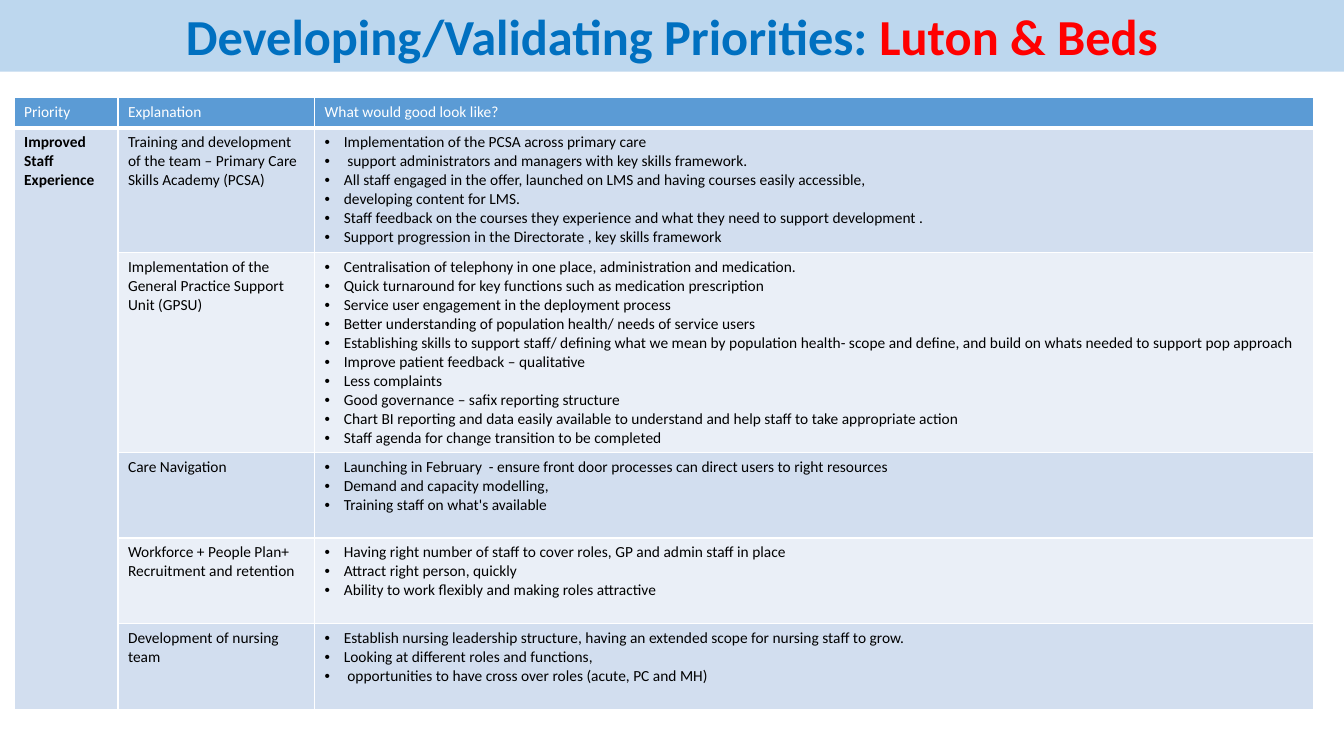
from lxml import etree
from pptx import Presentation
from pptx import util as u
from pptx.dml.color import RGBColor
from pptx.enum import text
from pptx.oxml import ns

W, H = 13.33, 7.5
FONT = "Calibri"
COLORS = {"band": "BDD7EE", "title": "0070C0", "place": "FF0000", "head": "5B9BD5",
          "odd": "D2DEEF", "even": "EAEFF7", "white": "FFFFFF", "black": "000000"}
COLUMNS = [1.03, 1.95, 9.91]
ROWS = [0.3, 1.23, 1.98, 0.85, 0.85, 0.85]
HEADINGS = ["Priority", "Explanation", "What would good look like?"]
PRIORITY = "Improved Staff Experience"
ACTIONS = [
    ("Training and development of the team – Primary Care Skills Academy (PCSA)", [
        "Implementation of the PCSA across primary care",
        " support administrators and managers with key skills framework.",
        "All staff engaged in the offer, launched on LMS and having courses easily accessible,",
        "developing content for LMS.",
        "Staff feedback on the courses they experience and what they need to support development .",
        "Support progression in the Directorate , key skills framework"]),
    ("Implementation of the General Practice Support Unit (GPSU)", [
        "Centralisation of telephony in one place, administration and medication.",
        "Quick turnaround for key functions such as medication prescription",
        "Service user engagement in the deployment process",
        "Better understanding of population health/ needs of service users",
        "Establishing skills to support staff/ defining what we mean by population health- "
        "scope and define, and build on whats needed to support pop approach",
        "Improve patient feedback – qualitative",
        "Less complaints",
        "Good governance – safix reporting structure",
        "Chart BI reporting and data easily available to understand and help staff to take "
        "appropriate action",
        "Staff agenda for change transition to be completed"]),
    ("Care Navigation", [
        "Launching in February  - ensure front door processes can direct users to right resources",
        "Demand and capacity modelling,",
        "Training staff on what's available"]),
    ("Workforce + People Plan+ Recruitment and retention", [
        "Having right number of staff to cover roles, GP and admin staff in place",
        "Attract right person, quickly",
        "Ability to work flexibly and making roles attractive"]),
    ("Development of nursing team", [
        "Establish nursing leadership structure, having an extended scope for nursing staff to grow.",
        "Looking at different roles and functions,",
        " opportunities to have cross over roles (acute, PC and MH)"]),
]


def rgb(name):
    return RGBColor.from_string(COLORS[name])


def add_run(p, words, size, color, bold=False):
    r = p.add_run()
    r.text = words
    r.font.name, r.font.size, r.font.bold = FONT, u.Pt(size), bold
    r.font.color.rgb = rgb(color)


def add_bullet(p, indent=0.19):
    pPr = p._p.get_or_add_pPr()
    pPr.set("marL", str(u.Inches(indent)))
    pPr.set("indent", str(-u.Inches(indent)))
    etree.SubElement(pPr, ns.qn("a:buFont"), typeface="Arial")
    etree.SubElement(pPr, ns.qn("a:buChar"), char="•")


def set_borders(cell, bottom=1):
    tcPr = cell._tc.get_or_add_tcPr()
    for side, width in (("L", 1), ("R", 1), ("T", 1), ("B", bottom)):
        ln = etree.SubElement(tcPr, ns.qn("a:ln" + side), w=str(u.Pt(width)))
        fill = etree.SubElement(ln, ns.qn("a:solidFill"))
        etree.SubElement(fill, ns.qn("a:srgbClr"), val=COLORS["white"])


def fill_cell(cell, lines, fill, color="black", bold=False, bullets=False, bottom=1):
    set_borders(cell, bottom)
    cell.fill.solid()
    cell.fill.fore_color.rgb = rgb(fill)
    tf = cell.text_frame
    for i, line in enumerate(lines):
        p = tf.add_paragraph() if i else tf.paragraphs[0]
        if bullets:
            add_bullet(p)
        add_run(p, line, 11, color, bold)


def add_title(slide, x, y, w, h):
    sp = slide.shapes.title
    sp.left, sp.top, sp.width, sp.height = (u.Inches(v) for v in (x, y, w, h))
    sp.fill.solid()
    sp.fill.fore_color.rgb = rgb("band")
    tf = sp.text_frame
    tf.word_wrap, tf.auto_size = True, text.MSO_AUTO_SIZE.NONE
    tf.vertical_anchor = text.MSO_ANCHOR.MIDDLE
    p = tf.paragraphs[0]
    p.alignment = text.PP_ALIGN.CENTER
    add_run(p, "Developing/Validating Priorities: ", 36, "title", True)
    add_run(p, "Luton & Beds", 36, "place", True)


def add_priorities(slide, x, y):
    frame = slide.shapes.add_table(len(ROWS), len(COLUMNS), u.Inches(x), u.Inches(y),
                                   u.Inches(sum(COLUMNS)), u.Inches(sum(ROWS)))
    table = frame.table
    for column, width in zip(table.columns, COLUMNS):
        column.width = u.Inches(width)
    for row, height in zip(table.rows, ROWS):
        row.height = u.Inches(height)

    # Header row
    for c, heading in enumerate(HEADINGS):
        fill_cell(table.cell(0, c), [heading], "head", "white", bottom=3)

    # One priority spanning all its actions
    table.cell(1, 0).merge(table.cell(len(ACTIONS), 0))
    fill_cell(table.cell(1, 0), [PRIORITY], "odd", bold=True)
    for n, (explanation, outcomes) in enumerate(ACTIONS, 1):
        shade = "odd" if n % 2 else "even"
        fill_cell(table.cell(n, 1), [explanation], shade)
        fill_cell(table.cell(n, 2), outcomes, shade, bullets=True)


def main():
    prs = Presentation()
    prs.slide_width, prs.slide_height = u.Inches(W), u.Inches(H)
    slide = prs.slides.add_slide(prs.slide_layouts[5])
    add_title(slide, 0, 0, W, 0.71)
    add_priorities(slide, 0.14, 0.97)
    prs.save("out.pptx")


if __name__ == "__main__":
    main()
